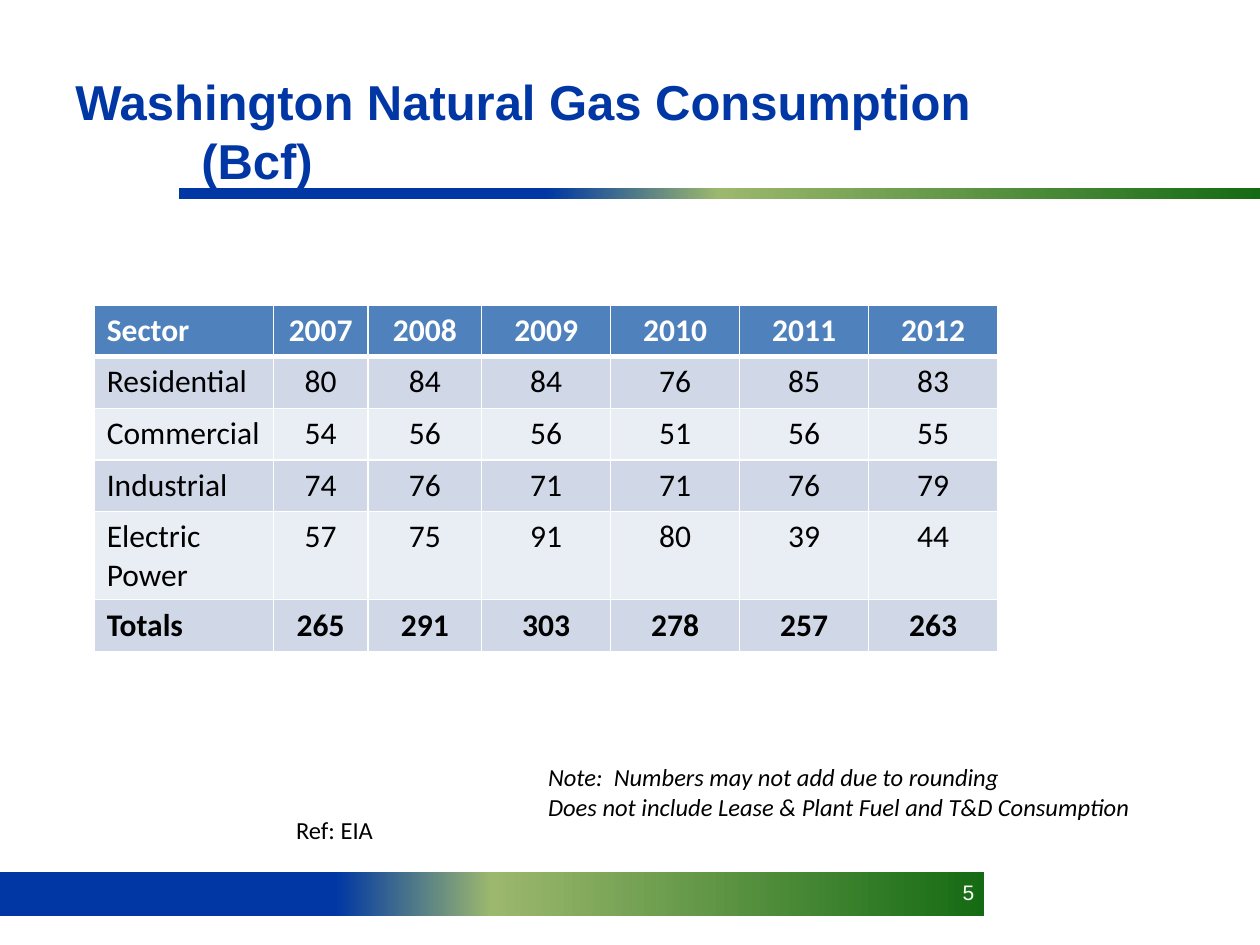
from copy import deepcopy
from dataclasses import dataclass

from lxml.etree import SubElement
from pptx import Presentation
from pptx.dml.color import RGBColor
from pptx.enum.shapes import MSO_SHAPE
from pptx.enum.text import MSO_ANCHOR, MSO_AUTO_SIZE, PP_ALIGN
from pptx.oxml.ns import qn
from pptx.util import Cm, Pt


@dataclass(frozen=True)
class Theme:
    blue: str = "0037A4"
    white: str = "FFFFFF"
    black: str = "000000"
    header: str = "4F81BD"
    bands: tuple = ("D0D8E8", "E9EDF4")
    gradient: tuple = ((0.34, "0037A4"), (0.5, "9CB86E"), (1, "156B13"))
    heading_font: str = "Arial"
    body_font: str = "Calibri"
    title_size: int = 28
    table_size: int = 18
    note_size: int = 14
    number_size: int = 12


THEME = Theme()


@dataclass(frozen=True)
class Box:
    left: float
    top: float
    width: float
    height: float

    def lengths(self) -> tuple:
        return Cm(self.left), Cm(self.top), Cm(self.width), Cm(self.height)


@dataclass(frozen=True)
class Style:
    size: int
    color: str = THEME.black
    font: str = THEME.body_font
    bold: bool = False
    italic: bool = False
    align: PP_ALIGN = PP_ALIGN.LEFT


@dataclass(frozen=True)
class Label:
    box: Box
    lines: tuple
    style: Style
    wrap: bool = False
    anchor: MSO_ANCHOR = MSO_ANCHOR.TOP
    hanging: float = 0


BARS = (Box(0, 17.58, 19.84, 0.88), Box(3.6, 3.8, 21.8, 0.22))

LABELS = (
    Label(Box(13.97, 17.6, 5.92, 1.07), ("5",),
          Style(THEME.number_size, THEME.white, THEME.heading_font, align=PP_ALIGN.RIGHT), wrap=True),
    Label(Box(1.27, 1.32, 23.7, 2.62), ("Washington Natural Gas Consumption\v(Bcf)",),
          Style(THEME.title_size, THEME.blue, THEME.heading_font, bold=True),
          wrap=True, anchor=MSO_ANCHOR.MIDDLE, hanging=2.54),
    Label(Box(5.72, 16.3, 2.08, 0.86), ("Ref: EIA",), Style(THEME.note_size)),
    Label(Box(10.8, 15.24, 12.34, 1.45),
          ("Note:  Numbers may not add due to rounding",
           "Does not include Lease & Plant Fuel and T&D Consumption"),
          Style(THEME.note_size, italic=True)),
)

TABLE_BOX = Box(1.9, 6.15, 18.21, 6.93)
COLUMN_WIDTHS = (3.61, 1.91, 2.29) + (2.6,) * 4
ROW_HEIGHT = 1.04
ROWS = (
    ("Sector", 2007, 2008, 2009, 2010, 2011, 2012),
    ("Residential", 80, 84, 84, 76, 85, 83),
    ("Commercial", 54, 56, 56, 51, 56, 55),
    ("Industrial", 74, 76, 71, 71, 76, 79),
    ("Electric Power", 57, 75, 91, 80, 39, 44),
    ("Totals", 265, 291, 303, 278, 257, 263),
)


def style_paragraph(paragraph, style: Style) -> None:
    paragraph.alignment = style.align
    font = paragraph.font
    font.name, font.size = style.font, Pt(style.size)
    font.bold, font.italic = style.bold, style.italic
    font.color.rgb = RGBColor.from_string(style.color)


def add_bar(slide, box: Box) -> None:
    shape = slide.shapes.add_shape(MSO_SHAPE.RECTANGLE, *box.lengths())
    shape.shadow.inherit = False
    shape.line.fill.background()
    shape.fill.gradient()
    shape.fill.gradient_angle = 0
    stop_list = shape._element.spPr.find(f".//{qn('a:gsLst')}")
    stop_list.append(deepcopy(stop_list[-1]))
    for stop, (position, color) in zip(shape.fill.gradient_stops, THEME.gradient):
        stop.position = position
        stop.color.rgb = RGBColor.from_string(color)


def add_label(slide, label: Label) -> None:
    frame = slide.shapes.add_textbox(*label.box.lengths()).text_frame
    frame.word_wrap = label.wrap
    frame.vertical_anchor = label.anchor
    if not label.wrap:
        frame.auto_size = MSO_AUTO_SIZE.SHAPE_TO_FIT_TEXT
    for index, line in enumerate(label.lines):
        paragraph = frame.add_paragraph() if index else frame.paragraphs[0]
        paragraph.text = line
        if label.hanging:
            properties = paragraph._p.get_or_add_pPr()
            properties.set("marL", str(Cm(label.hanging)))
            properties.set("indent", str(-Cm(label.hanging)))
        style_paragraph(paragraph, label.style)
        for run in paragraph.runs:
            run.font.size = Pt(label.style.size)


def set_borders(cell, top: float, bottom: float) -> None:
    properties = cell._tc.get_or_add_tcPr()
    for side, width in (("L", 1), ("R", 1), ("T", top), ("B", bottom)):
        line = SubElement(properties, qn(f"a:ln{side}"), w=str(Pt(width)))
        fill = SubElement(line, qn("a:solidFill"))
        SubElement(fill, qn("a:srgbClr"), val=THEME.white)


def add_consumption_table(slide) -> None:
    table = slide.shapes.add_table(len(ROWS), len(COLUMN_WIDTHS), *TABLE_BOX.lengths()).table
    table.horz_banding = False
    for column, width in zip(table.columns, COLUMN_WIDTHS):
        column.width = Cm(width)
    for row_index, values in enumerate(ROWS):
        table.rows[row_index].height = Cm(ROW_HEIGHT)
        is_header = row_index == 0
        color = THEME.header if is_header else THEME.bands[(row_index - 1) % 2]
        for column_index, value in enumerate(values):
            cell = table.cell(row_index, column_index)
            cell.text = str(value)
            style_paragraph(cell.text_frame.paragraphs[0], Style(
                THEME.table_size,
                THEME.white if is_header else THEME.black,
                bold=row_index in (0, len(ROWS) - 1),
                align=PP_ALIGN.CENTER if column_index else PP_ALIGN.LEFT,
            ))
            set_borders(cell, 3 if row_index == 1 else 1, 3 if is_header else 1)
            cell.fill.solid()
            cell.fill.fore_color.rgb = RGBColor.from_string(color)


def main() -> None:
    presentation = Presentation()
    presentation.slide_width, presentation.slide_height = Cm(25.4), Cm(19.05)
    slide = presentation.slides.add_slide(presentation.slide_layouts[6])
    for bar in BARS:
        add_bar(slide, bar)
    for label in LABELS:
        add_label(slide, label)
    add_consumption_table(slide)
    presentation.save("out.pptx")


if __name__ == "__main__":
    main()
